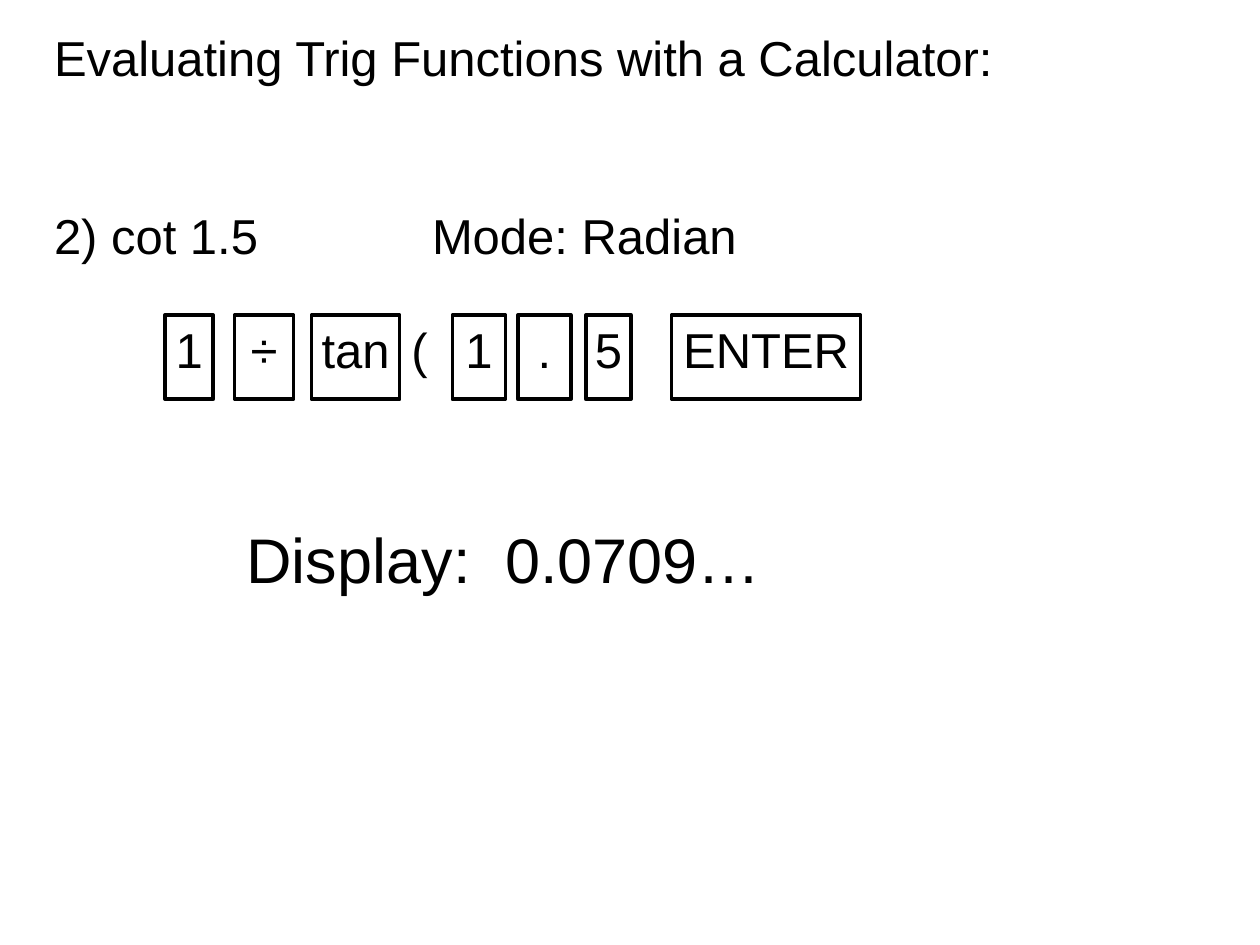
from dataclasses import dataclass

from lxml.etree import SubElement
from pptx import Presentation
from pptx.dml.color import RGBColor
from pptx.enum.shapes import MSO_SHAPE
from pptx.enum.text import MSO_ANCHOR, PP_ALIGN
from pptx.oxml.ns import qn
from pptx.util import Cm, Pt


@dataclass(frozen=True)
class Theme:
    ink: RGBColor = RGBColor(0, 0, 0)
    font: str = "Arial"
    body: Pt = Pt(28)
    result: Pt = Pt(36)
    outline: Pt = Pt(2)


@dataclass(frozen=True)
class Box:
    left: float
    top: float
    width: float
    height: float

    def lengths(self):
        return Cm(self.left), Cm(self.top), Cm(self.width), Cm(self.height)


THEME = Theme()

# label, offset from the row's left edge, width (cm), whether it is outlined
KEYS = [
    ("1", 0, 0.97, True),
    ("÷", 1.4, 1.19, True),
    ("tan", 2.95, 1.78, True),
    ("(", 4.73, 0.8, False),
    ("1", 5.79, 1.07, True),
    (".", 7.11, 1.07, True),
    ("5", 8.48, 0.91, True),
    ("ENTER", 10.21, 3.81, True),
]


def add_span(para, text, size):
    span = para.add_run()
    span.text = text
    span.font.name = THEME.font
    span.font.size = size
    span.font.color.rgb = THEME.ink


def add_text_frame(page, box):
    frame = page.shapes.add_textbox(*box.lengths()).text_frame
    frame.word_wrap = True
    return frame


def add_tab_stop(para, position):
    stops = SubElement(para._p.get_or_add_pPr(), qn("a:tabLst"))
    SubElement(stops, qn("a:tab"), pos=str(position), algn="l")


def add_problem(page, box):
    frame = add_text_frame(page, box)
    add_span(frame.paragraphs[0], "Evaluating Trig Functions with a Calculator:", THEME.body)
    question = frame.add_paragraph()
    question.space_before = Pt(68)
    add_tab_stop(question, Cm(7.62))
    add_span(question, "2) cot 1.5\tMode: Radian", THEME.body)


def add_key(page, box, label, outlined):
    key = page.shapes.add_shape(MSO_SHAPE.RECTANGLE, *box.lengths())
    key.shadow.inherit = False
    key.fill.background()
    if outlined:
        key.line.color.rgb = THEME.ink
        key.line.width = THEME.outline
    else:
        key.line.fill.background()
    frame = key.text_frame
    frame.word_wrap = False
    frame.vertical_anchor = MSO_ANCHOR.MIDDLE
    frame.margin_left = frame.margin_right = frame.margin_top = 0
    frame.margin_bottom = Cm(0.33)
    para = frame.paragraphs[0]
    para.alignment = PP_ALIGN.CENTER
    add_span(para, label, THEME.body)


def add_key_row(page, box):
    for label, offset, width, outlined in KEYS:
        add_key(page, Box(box.left + offset, box.top, width, box.height), label, outlined)


def add_result(page, box):
    frame = add_text_frame(page, box)
    add_span(frame.paragraphs[0], "Display:  0.0709…", THEME.result)


def main():
    deck = Presentation()
    deck.slide_width, deck.slide_height = Cm(25.4), Cm(19.05)
    page = deck.slides.add_slide(deck.slide_layouts[6])
    add_problem(page, Box(0.84, 0.43, 22.86, 5))
    add_key_row(page, Box(3.33, 6.35, 14.02, 1.7))
    add_result(page, Box(4.72, 10.36, 16.23, 1.8))
    deck.save("out.pptx")


if __name__ == "__main__":
    main()
